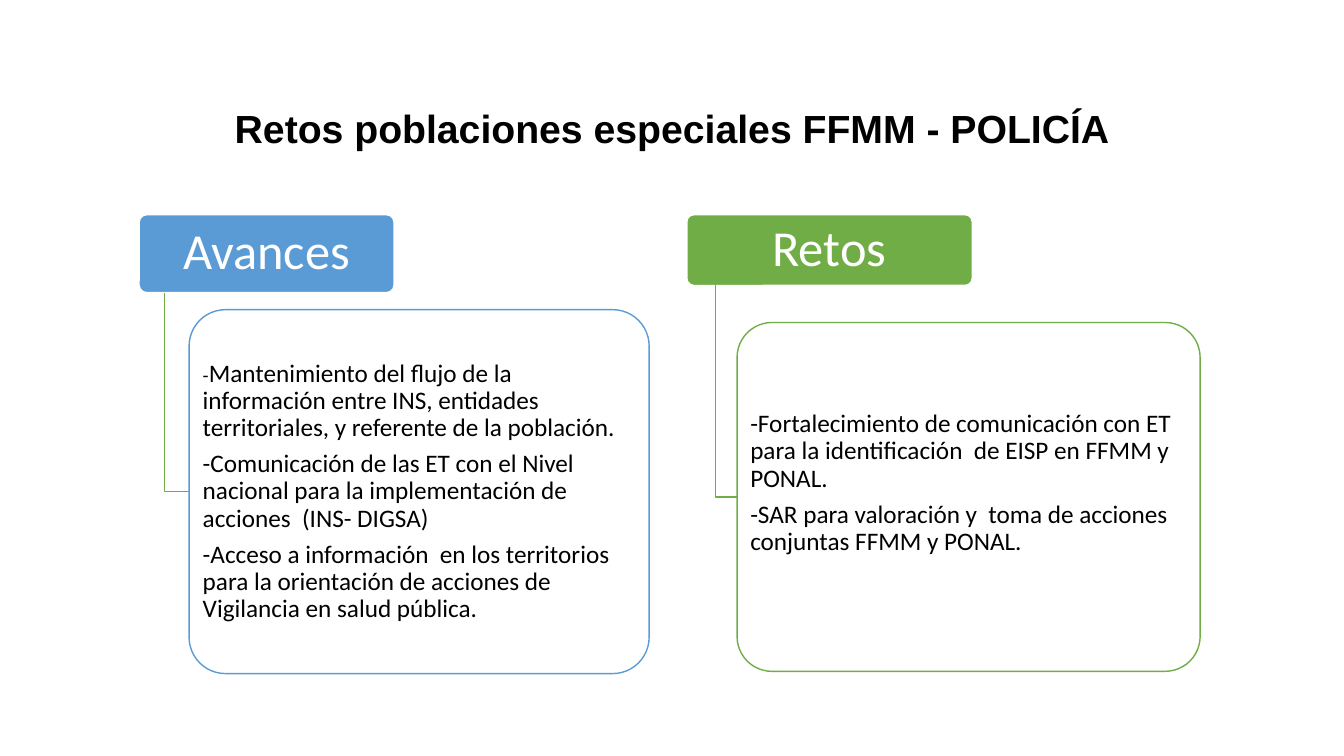
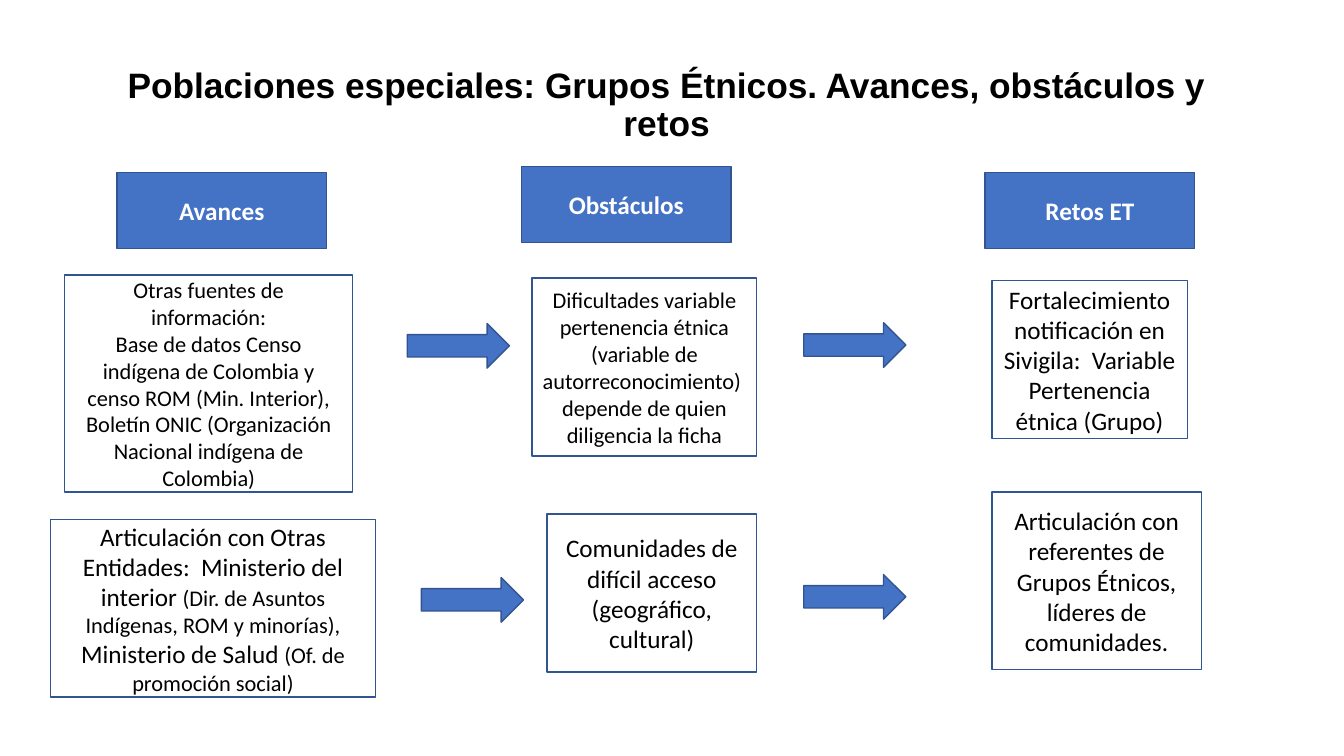
from pptx import Presentation
from pptx.dml.color import RGBColor
from pptx.enum.shapes import MSO_SHAPE
from pptx.enum.text import MSO_ANCHOR, PP_ALIGN
from pptx.util import Inches, Pt

RECT = MSO_SHAPE.RECTANGLE
ROUND = MSO_SHAPE.ROUNDED_RECTANGLE
ARROW = MSO_SHAPE.RIGHT_ARROW
MIDDLE = MSO_ANCHOR.MIDDLE
CENTER, LEFT = PP_ALIGN.CENTER, PP_ALIGN.LEFT

COLORS = {
    "white": "FFFFFF",
    "black": "000000",
    "sky": "5B9BD5",
    "green": "70AD47",
    "blue": "4472C4",
    "navy": "325491",
}
WIDTH, HEIGHT = Inches(13.33), Inches(7.5)
TITLE_SIZE = (88.4, 14)
HEAD_SIZE = (15.6, 10.1)
ARROW_SIZE = (7.6, 5.9)

COLUMNS = [
    {
        "box": (10.35, 28.4, 37.95, 60.7),
        "color": "sky",
        "head": ("Avances", 0.5, 0.17),
        "panel_top": 0.207,
        "bottom_inset": 0.03,
        "lines": [
            [("-", 14), ("Mantenimiento del flujo de la información entre INS, "
                         "entidades territoriales, y referente de la población.", 18)],
            [("-Comunicación de las ET con el Nivel nacional para la "
              "implementación de acciones  (INS- DIGSA)", 18)],
            [("-Acceso a información  en los territorios para la orientación "
              "de acciones de Vigilancia en salud pública.", 18)],
        ],
    },
    {
        "box": (51.1, 28.4, 38.2, 60.4),
        "color": "green",
        "head": ("Retos", 0.556, 0.155),
        "panel_top": 0.236,
        "bottom_inset": 0.3,
        "lines": [
            [("-Fortalecimiento de comunicación con ET para la "
              "identificación  de EISP en FFMM y PONAL.", 18)],
            [("-SAR para valoración y  toma de acciones conjuntas "
              "FFMM y PONAL.", 18)],
        ],
    },
]

HEADS = [("Avances", 8.7, 22.8), ("Obstáculos", 38.8, 22), ("Retos ET", 73.3, 22.8)]
CARDS = [
    ((4.8, 36.4, 21.45, 28.7), [
        [("Otras fuentes de información:", 16)],
        [("Base de datos Censo indígena de Colombia y censo ROM (Min. Interior), "
          "Boletín ONIC (Organización Nacional indígena de Colombia)", 16)],
    ]),
    ((39.6, 36.8, 16.7, 23.5), [
        [("Dificultades variable pertenencia étnica (variable de "
          "autorreconocimiento)  depende de quien diligencia la ficha", 16)],
    ]),
    ((73.8, 37.1, 14.55, 20.9), [
        [("Fortalecimiento notificación en Sivigila:  Variable "
          "Pertenencia étnica (Grupo)", 18)],
    ]),
    ((3.75, 68.7, 24.2, 23.5), [
        [("Articulación con Otras Entidades:  Ministerio del interior ", 18),
         ("(Dir. de Asuntos Indígenas, ROM y minorías), ", 16),
         ("Ministerio de Salud ", 18),
         ("(Of. de promoción social)", 16)],
    ]),
    ((40.7, 68, 15.6, 20.9), [
        [("Comunidades de difícil acceso", 18)],
        [("(geográfico, cultural)", 18)],
    ]),
    ((73.8, 65.1, 15.6, 23.5), [
        [("Articulación con referentes de Grupos Étnicos, "
          "líderes de comunidades.", 18)],
    ]),
]
ARROWS = [(30.3, 42.8), (59.8, 42.7), (31.35, 76.4), (59.8, 76)]


def rgb(name):
    return RGBColor.from_string(COLORS[name])


def share(x, y, w, h):
    return [round(v * full / 100)
            for v, full in zip((x, y, w, h), (WIDTH, HEIGHT, WIDTH, HEIGHT))]


def write(sp, lines, color="black", bold=False, font="Calibri",
          align=CENTER, spacing=1.0, gap=0):
    tf = sp.text_frame
    tf.word_wrap = True
    tf.vertical_anchor = MIDDLE
    for i, line in enumerate(lines):
        p = tf.add_paragraph() if i else tf.paragraphs[0]
        p.alignment = align
        p.line_spacing = spacing
        p.space_before = Pt(gap if i else 0)
        for text, size in line:
            r = p.add_run()
            r.text = text
            r.font.name = font
            r.font.size = Pt(size)
            r.font.bold = bold
            r.font.color.rgb = rgb(color)


def set_margins(sp, side, top, bottom):
    tf = sp.text_frame
    tf.margin_left = tf.margin_right = Inches(side)
    tf.margin_top, tf.margin_bottom = Inches(top), Inches(bottom)


def paint(sp, fill, line):
    sp.shadow.inherit = False
    if fill:
        sp.fill.solid()
        sp.fill.fore_color.rgb = rgb(fill)
    else:
        sp.fill.background()
    sp.line.color.rgb = rgb(line)
    sp.line.width = Pt(1)


def add_box(s, kind, area, fill, line):
    sp = s.shapes.add_shape(kind, *area)
    paint(sp, fill, line)
    if kind == ROUND:
        sp.adjustments[0] = 0.1
    return sp


def add_title(s, text, x, y, size):
    sp = s.shapes.add_textbox(*share(x, y, *TITLE_SIZE))
    write(sp, [[(text, size)]], bold=True, font="Arial", spacing=0.9)


def add_column(s, column):
    x, y, w, h = share(*column["box"])
    color = column["color"]
    text, head_w, head_h = column["head"]
    head_w, head_h = round(w * head_w), round(h * head_h)
    panel_x, panel_y = x + round(w * 0.098), y + round(h * column["panel_top"])
    panel_w, panel_h = x + w - panel_x, y + h - panel_y

    head = add_box(s, ROUND, (x, y, head_w, head_h), color, "white")
    set_margins(head, 0.07, 0.05, 0.05)
    write(head, [[(text, 36)]], color="white", spacing=0.9)

    elbow_x, elbow_y = x + head_w // 10, panel_y + panel_h // 2
    outline = s.shapes.build_freeform(elbow_x, y + head_h)
    outline.add_line_segments([(elbow_x, elbow_y), (panel_x, elbow_y)], close=False)
    paint(outline.convert_to_shape(), None, "green")

    panel = add_box(s, ROUND, (panel_x, panel_y, panel_w, panel_h), "white", color)
    set_margins(panel, 0.03, 0.03, column["bottom_inset"])
    write(panel, column["lines"], align=LEFT, spacing=0.9, gap=6.3)


def add_head(s, text, x, y):
    sp = add_box(s, RECT, share(x, y, *HEAD_SIZE), "blue", "navy")
    write(sp, [[(text, 18)]], color="white", bold=True)


def add_card(s, box, lines):
    write(add_box(s, RECT, share(*box), None, "navy"), lines)


def build_challenges(s):
    add_title(s, "Retos poblaciones especiales FFMM - POLICÍA", 5.8, 10.3, 28)
    for column in COLUMNS:
        add_column(s, column)


def build_ethnic_groups(s):
    add_title(s, "Poblaciones especiales: Grupos Étnicos. Avances, obstáculos y retos",
              5.4, 7, 25.2)
    for head in HEADS:
        add_head(s, *head)
    for card in CARDS:
        add_card(s, *card)
    for x, y in ARROWS:
        add_box(s, ARROW, share(x, y, *ARROW_SIZE), "blue", "navy")


def main():
    prs = Presentation()
    prs.slide_width, prs.slide_height = WIDTH, HEIGHT
    for build in (build_challenges, build_ethnic_groups):
        build(prs.slides.add_slide(prs.slide_layouts[6]))
    prs.save("out.pptx")


if __name__ == "__main__":
    main()
